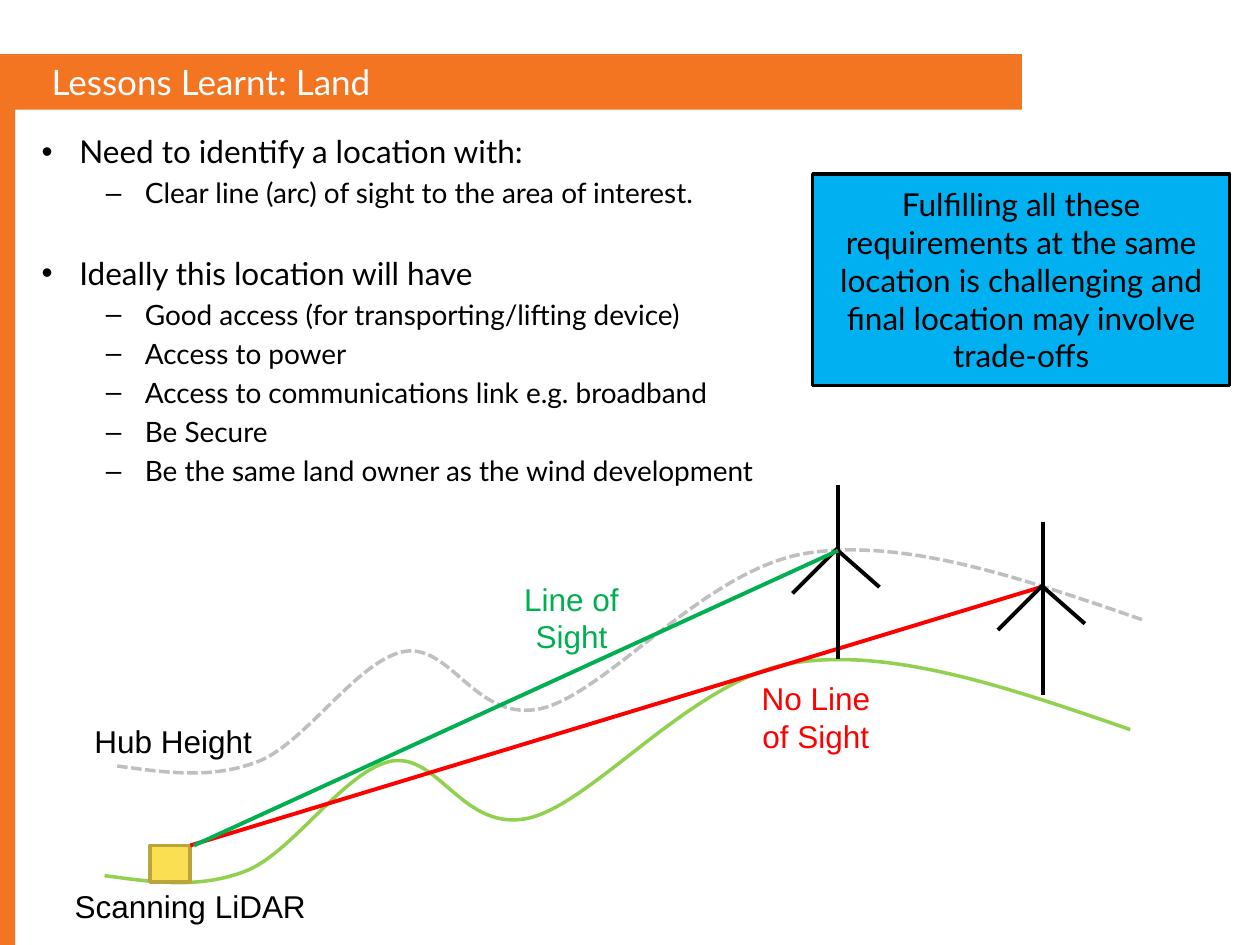
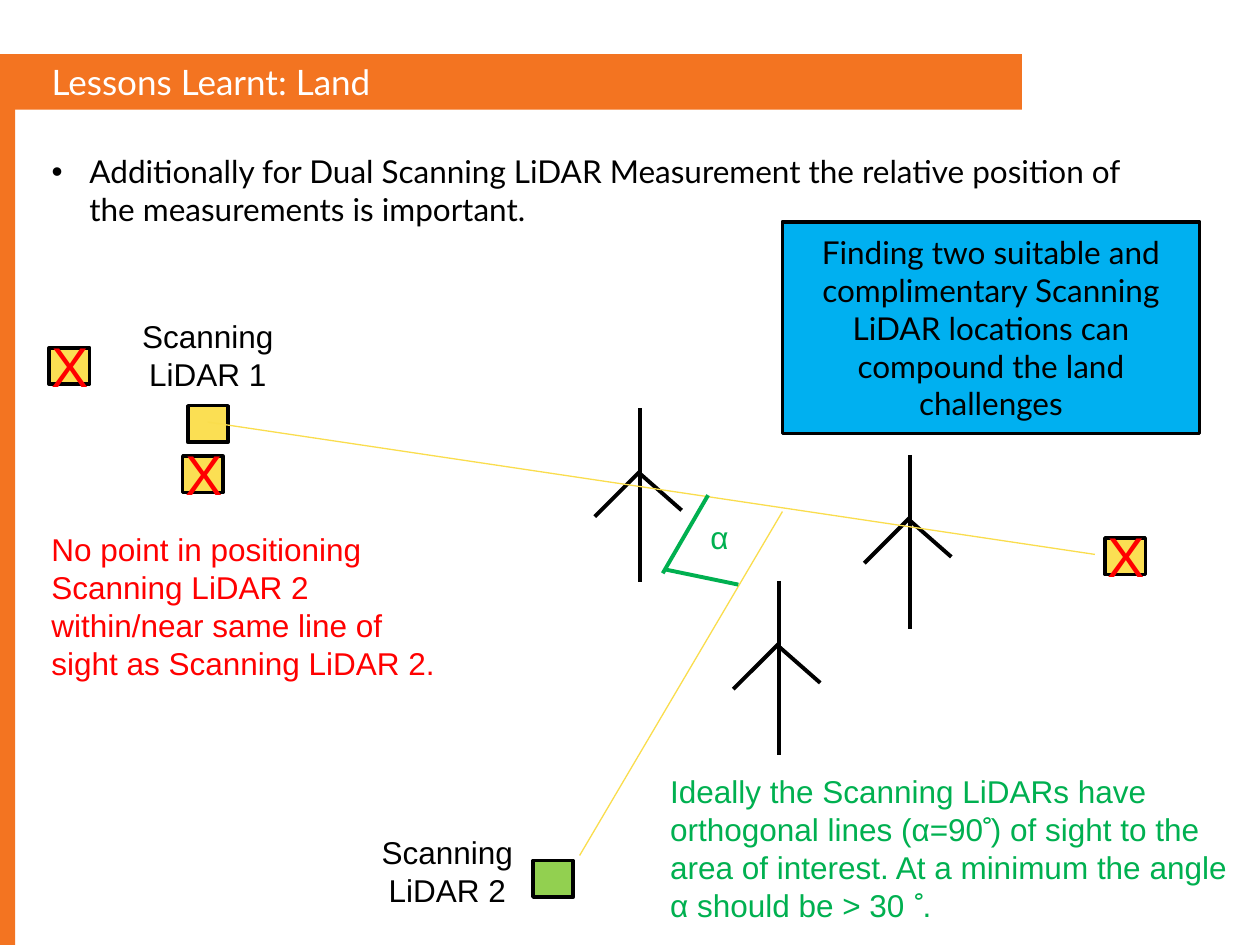
from lxml import etree
from pptx import Presentation
from pptx.dml.color import RGBColor
from pptx.enum.dml import MSO_LINE
from pptx.enum.shapes import MSO_CONNECTOR, MSO_SHAPE
from pptx.enum.text import MSO_ANCHOR, MSO_AUTO_SIZE, PP_ALIGN
from pptx.oxml.ns import qn
from pptx.util import Inches, Pt

LEFT, CENTER = PP_ALIGN.LEFT, PP_ALIGN.CENTER
MIDDLE = MSO_ANCHOR.MIDDLE
NO_FIT, GROW = MSO_AUTO_SIZE.NONE, MSO_AUTO_SIZE.SHAPE_TO_FIT_TEXT
RECTANGLE, STRAIGHT = MSO_SHAPE.RECTANGLE, MSO_CONNECTOR.STRAIGHT
SYS_DASH = MSO_LINE.SQUARE_DOT

COLORS = {
    "band": "F37421", "white": "FFFFFF", "black": "000000",
    "callout": "00B0F0", "lidar": "FBDF53", "lidar_edge": "BAA53D",
    "beam": "FADD4D", "terrain": "92D050", "hub_height": "BFBFBF",
    "good": "00B050", "bad": "FF0000",
}
RGB = {name: RGBColor.from_string(value) for name, value in COLORS.items()}
HEADING_FONT, LABEL_FONT, DEGREE_FONT = "Lato", "Arial", "Comic Neue"
LIDAR_SIZE = (0.32, 0.29)


def draw_box(slide, at, fill, edge=None):
    box = slide.shapes.add_shape(RECTANGLE, *map(Inches, at))
    box.shadow.inherit = False
    box.fill.solid()
    box.fill.fore_color.rgb = RGB[fill]
    if edge:
        box.line.color.rgb = RGB[edge]
        box.line.width = Pt(2)
    else:
        box.line.fill.background()
    return box


def draw_line(slide, start, end, color, width=2.25):
    line = slide.shapes.add_connector(STRAIGHT, *map(Inches, (*start, *end)))
    line.line.color.rgb = RGB[color]
    line.line.width = Pt(width)
    etree.SubElement(line._element.spPr, qn("a:effectLst"))


prs = Presentation()
prs.slide_width, prs.slide_height = Inches(10), Inches(7.5)
layout = prs.slide_layouts[1]
land = prs.slides.add_slide(layout)
dual = prs.slides.add_slide(layout)

# Bands shared through the layout, behind its placeholders
for number, at in enumerate([(0, 0.43, 8.11, 0.44), (0, 0.8, 0.12, 6.7)]):
    band = draw_box(land, at, "band")._element
    band.nvSpPr.cNvPr.id = 20 + number
    layout.shapes._spTree.insert(2 + number, band)

# Titles and bullet lists: (level, text, space before in points)
land_points = [
    (0, "Need to identify a location with:", 0),
    (1, "Clear line (arc) of sight to the area of interest.", 3.2),
    (0, "Ideally this location will have", 25.4),
    (1, "Good access (for transporting/lifting device)", 3.2),
    (1, "Access to power", 3.2),
    (1, "Access to communications link e.g. broadband", 3.2),
    (1, "Be Secure", 3.2),
    (1, "Be the same land owner as the wind development", 3.2),
]
dual_points = [
    (0, "Additionally for Dual Scanning LiDAR Measurement the relative position of "
        "the measurements is important.", 0),
]
INDENTS = [(0.3, -0.3), (0.82, -0.31)]
for slide, points, body_at in [
    (land, land_points, (0.23, 1, 8.84, 0.57)),
    (dual, dual_points, (0.31, 1.16, 9.07, 0.57)),
]:
    title, body = slide.shapes.title, slide.placeholders[1]
    for holder, at in [(title, (0.31, 0.47, 6.05, 0.35)), (body, body_at)]:
        holder.left, holder.top, holder.width, holder.height = map(Inches, at)
        holder.text_frame.auto_size = NO_FIT
    title.text_frame.text = "Lessons Learnt: Land"
    title.text_frame.vertical_anchor = MIDDLE
    heading = title.text_frame.paragraphs[0]
    heading.alignment = LEFT
    heading.font.name, heading.font.size = HEADING_FONT, Pt(20)
    heading.font.color.rgb = RGB["white"]

    body.text_frame.text = "\n".join(text for _, text, _ in points)
    for point, (level, _, space) in zip(body.text_frame.paragraphs, points):
        point.level = level
        point.space_before = Pt(space)
        margin, hanging = INDENTS[level]
        properties = point._p.get_or_add_pPr()
        properties.set("marL", str(Inches(margin)))
        properties.set("indent", str(Inches(hanging)))
        point.font.name, point.font.size = HEADING_FONT, Pt(18 - 2 * level)
        point.font.color.rgb = RGB["black"]

# Terrain profile, and the same profile raised to hub height
terrain_left, terrain_top, terrain_height = 0.83, 5.24, 1.77
terrain_start = (0.83, 6.95)
terrain_curves = [
    ((1.21, 7), (1.58, 7.06), (1.96, 6.91)),
    ((2.34, 6.75), (2.74, 6.11), (3.11, 6.04)),
    ((3.49, 5.98), (3.68, 6.62), (4.21, 6.49)),
    ((4.74, 6.35), (5.51, 5.38), (6.31, 5.26)),
    ((7.1, 5.14), (8.04, 5.47), (8.97, 5.79)),
]
for color, dx, dy, dash in [("terrain", 0, 0, None), ("hub_height", 0.1, -0.87, SYS_DASH)]:
    builder = land.shapes.build_freeform(*map(Inches, terrain_start))
    builder.add_line_segments(
        [tuple(map(Inches, curve[-1])) for curve in terrain_curves], close=False)
    profile = builder.convert_to_shape()
    profile.left, profile.top = Inches(terrain_left + dx), Inches(terrain_top + dy)
    profile.height = Inches(terrain_height)
    profile.shadow.inherit = False
    profile.fill.background()
    profile.line.color.rgb = RGB[color]
    profile.line.width = Pt(2)
    profile.line.dash_style = dash

    # Bend the straight segments into Bézier curves
    outline = next(profile._element.iter(qn("a:path")))
    outline.set("h", str(Inches(terrain_height)))
    for segment in list(outline):
        outline.remove(segment)
    for tag, points in [("a:moveTo", [terrain_start]),
                        *(("a:cubicBezTo", curve) for curve in terrain_curves)]:
        segment = etree.SubElement(outline, qn(tag))
        for x, y in points:
            etree.SubElement(segment, qn("a:pt"), x=str(Inches(x - terrain_left)),
                             y=str(Inches(y - terrain_top)))

draw_box(land, (1.19, 6.71, *LIDAR_SIZE), "lidar", "lidar_edge")
draw_line(land, (1.51, 6.71), (8.26, 4.66), "bad")

# Wind turbines: tower and three blades around each hub
turbine_parts = [
    ((0, 0), (0, 0.88)), ((0, -0.5), (0, 0.01)),
    ((0, 0), (-0.36, 0.36)), ((0, 0.02), (0.33, 0.31)),
]
for slide, x, y in [
    (land, 6.65, 4.35), (land, 8.28, 4.64),
    (dual, 5.08, 3.74), (dual, 7.22, 4.11), (dual, 6.18, 5.11),
]:
    for (x1, y1), (x2, y2) in turbine_parts:
        draw_line(slide, (x + x1, y + y1), (x + x2, y + y2), "black")

draw_line(land, (1.54, 6.71), (6.65, 4.37), "good")

# LiDAR positions, beams and the angle between them
rejected_positions = [(0.39, 2.76), (1.45, 3.62), (8.77, 4.27)]
for position in [(1.49, 3.22), *rejected_positions]:
    draw_box(dual, (*position, *LIDAR_SIZE), "lidar", "black")
draw_box(dual, (4.23, 6.83, *LIDAR_SIZE), "terrain", "black")
draw_line(dual, (1.65, 3.35), (8.69, 4.4), "beam", 0.75)
draw_line(dual, (4.6, 6.79), (6.21, 4.06), "beam", 0.75)
draw_line(dual, (5.26, 4.55), (5.62, 3.93), "good")
draw_line(dual, (5.28, 4.52), (5.86, 4.64), "good")

# Callouts
for slide, left, top, message in [
    (land, 6.45, 1.38, "Fulfilling all these requirements at the same location is "
                       "challenging and final location may involve trade-offs"),
    (dual, 6.21, 1.76, "Finding two suitable and complimentary Scanning LiDAR "
                       "locations can compound the land challenges"),
]:
    frame = draw_box(slide, (left, top, 3.31, 1.68), "callout", "black").text_frame
    frame.text = message
    frame.word_wrap = True
    frame.vertical_anchor = MIDDLE
    paragraph = frame.paragraphs[0]
    paragraph.alignment = CENTER
    paragraph.font.name, paragraph.font.size = HEADING_FONT, Pt(18)
    paragraph.font.color.rgb = RGB["black"]

# Labels: slide, place, runs, colour, alignment, size
labels = [
    (land, (0.65, 5.68, 1.48, 0.4), ["Hub Height"], "black", LEFT, 18),
    (land, (0.42, 6.99, 2.18, 0.4), ["Scanning LiDAR"], "black", CENTER, 18),
    (land, (3.89, 4.55, 1.29, 0.71), ["Line of Sight"], "good", CENTER, 18),
    (land, (5.83, 5.34, 1.29, 0.71), ["No Line of Sight"], "bad", CENTER, 18),
    (dual, (0.98, 2.47, 1.34, 0.71), ["Scanning LiDAR 1"], "black", CENTER, 18),
    (dual, (2.88, 6.56, 1.34, 0.71), ["Scanning LiDAR 2"], "black", CENTER, 18),
    (dual, (0.31, 4.16, 3.35, 1.31),
     ["No point in positioning Scanning LiDAR 2 within/near same line of sight "
      "as Scanning LiDAR 2."], "bad", LEFT, 18),
    (dual, (5.22, 6.08, 4.63, 1.31),
     ["Ideally the Scanning LiDARs have orthogonal lines (α=90", "˚",
      ") of sight to the area of interest. At a minimum the angle α should be > 30",
      " ˚", "."], "good", LEFT, 18),
    (dual, (5.54, 4.06, 0.43, 0.4), ["α"], "good", LEFT, 18),
]
for x, y in rejected_positions:
    labels.append((dual, (x - 0.08, y - 0.18, 0.32, 0.64), ["X"], "bad", LEFT, 32))

for slide, at, runs, color, alignment, size in labels:
    frame = slide.shapes.add_textbox(*map(Inches, at)).text_frame
    frame.word_wrap = True
    frame.auto_size = GROW
    paragraph = frame.paragraphs[0]
    paragraph.alignment = alignment
    paragraph.font.name, paragraph.font.size = LABEL_FONT, Pt(size)
    paragraph.font.color.rgb = RGB[color]
    for text in runs:
        run = paragraph.add_run()
        run.text = text
        if "˚" in text:
            run.font.name = DEGREE_FONT

prs.save("out.pptx")
